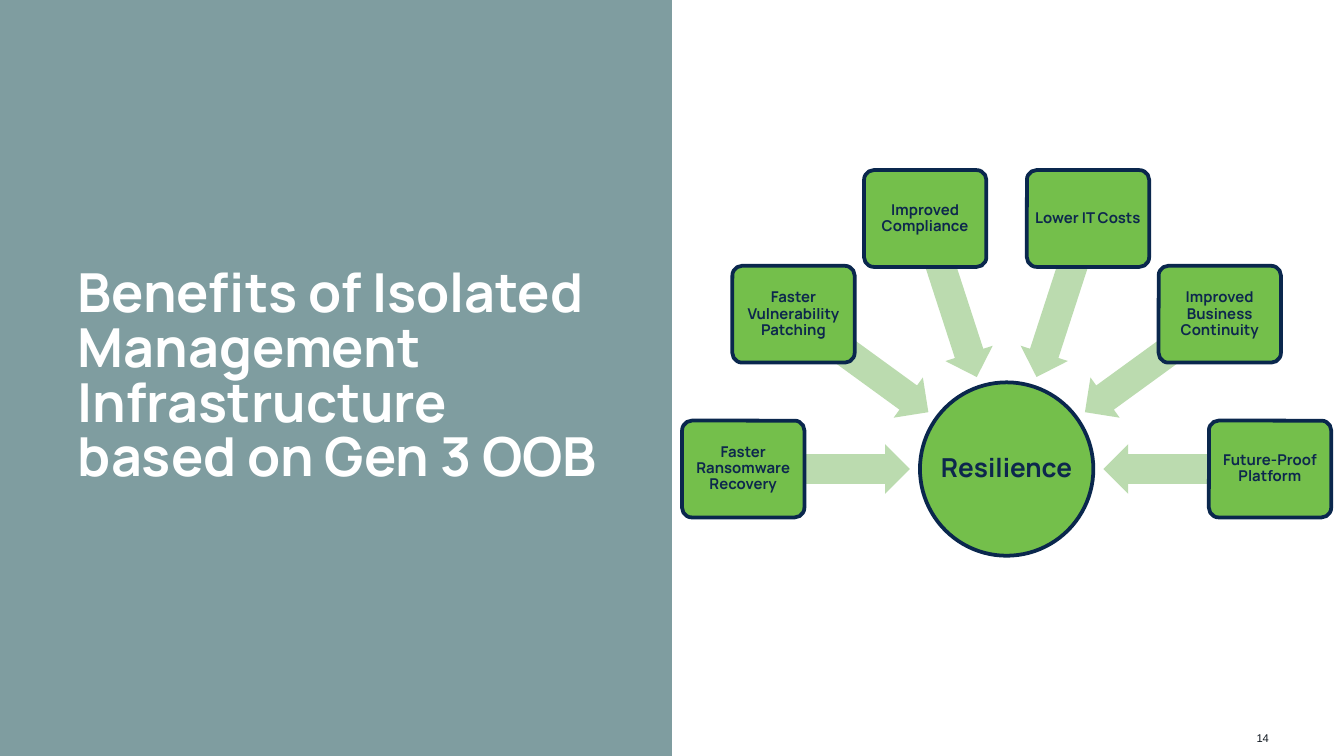
from math import cos, radians, sin

from lxml import etree
from pptx import Presentation
from pptx.dml.color import RGBColor
from pptx.enum.shapes import MSO_SHAPE
from pptx.enum.text import MSO_ANCHOR, MSO_AUTO_SIZE, PP_ALIGN
from pptx.oxml.ns import qn
from pptx.util import Inches, Pt

RECTANGLE, ELLIPSE = MSO_SHAPE.RECTANGLE, MSO_SHAPE.OVAL
ROUNDED, LEFT_ARROW = MSO_SHAPE.ROUNDED_RECTANGLE, MSO_SHAPE.LEFT_ARROW
MIDDLE, NO_AUTOFIT = MSO_ANCHOR.MIDDLE, MSO_AUTO_SIZE.NONE
LEFT, CENTER, RIGHT = PP_ALIGN.LEFT, PP_ALIGN.CENTER, PP_ALIGN.RIGHT

TEAL = RGBColor(0x00, 0x3D, 0x43)
GREEN = RGBColor(0x74, 0xBF, 0x4B)
PALE_GREEN = RGBColor(0xBB, 0xDB, 0xAF)
NAVY_LINE = RGBColor(0x0A, 0x27, 0x4D)
NAVY_TEXT = RGBColor(0x0D, 0x27, 0x4D)
WHITE = RGBColor(0xFF, 0xFF, 0xFF)
BLACK = RGBColor(0x10, 0x18, 0x20)

SLIDE_WIDTH = 10
SLIDE_HEIGHT = SLIDE_WIDTH * 9 / 16
HUB = (7.49, 3.49)
HUB_SIZE, BOX_SIZE, ARROW_SIZE = (1.29, 1.29), (0.91, 0.72), (1.24, 0.37)
BOX_RADIUS, ARROW_RADIUS = 1.96, 1.34
BENEFITS = [
    "Faster Ransomware Recovery",
    "Faster Vulnerability Patching",
    "Improved Compliance",
    "Lower IT Costs",
    "Improved Business Continuity",
    "Future-Proof Platform",
]


def place_text(shape, text, size, color, align, spacing=1.0, font="Manrope", bold=True):
    """Write one vertically centred paragraph into a shape."""
    frame = shape.text_frame
    frame.text = text
    frame.word_wrap = True
    frame.auto_size = NO_AUTOFIT
    frame.vertical_anchor = MIDDLE
    paragraph = frame.paragraphs[0]
    paragraph.alignment = align
    paragraph.line_spacing = spacing
    for run in paragraph.runs:
        run.font.name = font
        run.font.size = Pt(size)
        run.font.bold = bold
        run.font.color.rgb = color


def set_margins(shape, margin):
    """Give all four text margins the same width in inches."""
    frame = shape.text_frame
    frame.margin_left = frame.margin_right = Inches(margin)
    frame.margin_top = frame.margin_bottom = Inches(margin)


def add_filled(slide, kind, center, size, fill):
    """Add a flat borderless shape around a centre point."""
    left, top = (c - s / 2 for c, s in zip(center, size))
    shape = slide.shapes.add_shape(kind, *map(Inches, (left, top, *size)))
    shape.shadow.inherit = False
    shape.fill.solid()
    shape.fill.fore_color.rgb = fill
    shape.line.fill.background()
    return shape


def add_node(slide, kind, center, size, text, text_size):
    """Add a green outlined node with its label."""
    node = add_filled(slide, kind, center, size, GREEN)
    node.line.color.rgb = NAVY_LINE
    node.line.width = Pt(2)
    place_text(node, text, text_size, NAVY_TEXT, CENTER, 0.9)
    set_margins(node, 0.02)
    return node


def add_panel(slide):
    """Cover the left half with half-transparent teal."""
    size = (SLIDE_WIDTH / 2, SLIDE_HEIGHT)
    panel = add_filled(slide, RECTANGLE, (size[0] / 2, size[1] / 2), size, TEAL)
    color = panel.element.spPr.find(qn("a:solidFill"))[0]
    etree.SubElement(color, qn("a:alpha"), val="50000")
    slide.shapes.title.element.addprevious(panel.element)


def add_title(slide):
    """Fill and place the title placeholder."""
    title = slide.shapes.title
    title.left, title.top, title.width, title.height = map(Inches, (0.48, 1.82, 4.17, 1.99))
    text = "Benefits of Isolated Management Infrastructure\vbased on Gen 3 OOB"
    place_text(title, text, 28.8, WHITE, LEFT, 0.85)


def point_around_hub(angle, radius):
    """Return the point at an angle and distance from the hub."""
    return HUB[0] + radius * cos(radians(angle)), HUB[1] + radius * sin(radians(angle))


def add_diagram(slide):
    """Draw the hub with benefits on a half circle pointing at it."""
    hub = add_node(slide, ELLIPSE, HUB, HUB_SIZE, "Resilience", 14)
    hub.text_frame.word_wrap = False
    step = 180 / (len(BENEFITS) - 1)
    for index, benefit in enumerate(BENEFITS):
        angle = (180 + index * step) % 360
        arrow = add_filled(slide, LEFT_ARROW, point_around_hub(angle, ARROW_RADIUS), ARROW_SIZE, PALE_GREEN)
        arrow.adjustments[0], arrow.adjustments[1] = 0.6, 0.5
        arrow.rotation = angle
        box = add_node(slide, ROUNDED, point_around_hub(angle, BOX_RADIUS), BOX_SIZE, benefit, 8)
        box.adjustments[0] = 0.1


def add_page_number(slide):
    """Add the page number at the lower right."""
    number = slide.shapes.add_textbox(*map(Inches, (9.15, 5.34, 0.39, 0.3)))
    place_text(number, "14", 6, BLACK, RIGHT, font="Arial", bold=False)


def main():
    """Build and save the slide."""
    presentation = Presentation()
    presentation.slide_width = Inches(SLIDE_WIDTH)
    presentation.slide_height = Inches(SLIDE_HEIGHT)
    slide = presentation.slides.add_slide(presentation.slide_layouts.get_by_name("Title Only"))
    add_panel(slide)
    add_title(slide)
    add_page_number(slide)
    add_diagram(slide)
    presentation.save("out.pptx")


if __name__ == "__main__":
    main()
